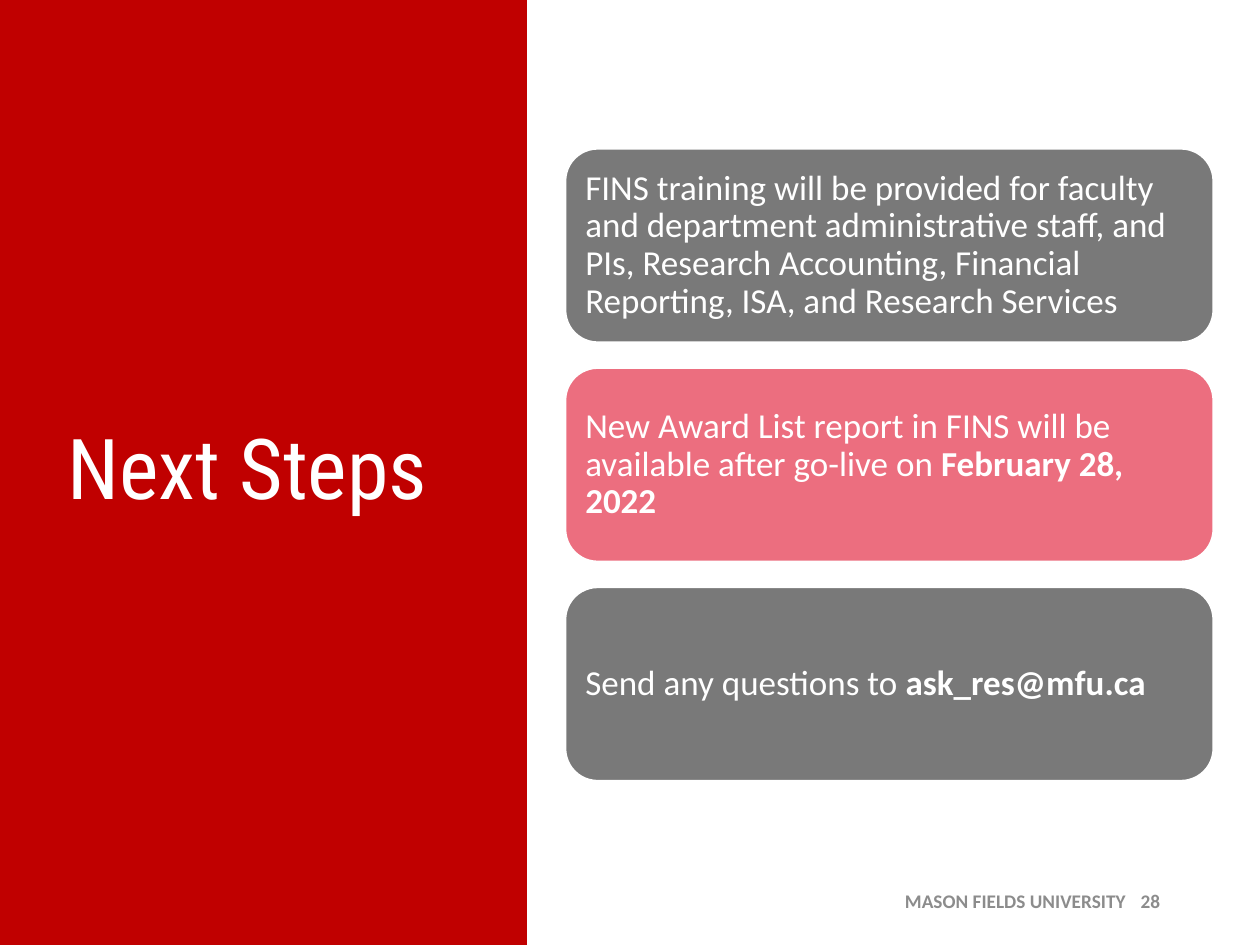
"""Build the "Next Steps" slide with a red title panel and three stacked cards."""
from dataclasses import dataclass
from typing import Any

import pptx
import pptx.dml.color
import pptx.enum.shapes
import pptx.enum.text
import pptx.util

Cm = pptx.util.Cm
Pt = pptx.util.Pt
ALIGN = pptx.enum.text.PP_ALIGN
MIDDLE = pptx.enum.text.MSO_ANCHOR.MIDDLE

RED, GREY, PINK = "C00000", "797979", "EC6E7F"
WHITE, FOOTER_GREY = "FFFFFF", "8C8C8C"
CARD_LEFT, CARD_TOP, CARD_WIDTH, CARD_HEIGHT = 11.4, 3.0, 13.06, 3.9
CARD_PITCH = 4.42


@dataclass(frozen=True)
class Card:
    fill: str
    text: str
    bold_text: str = ""


@dataclass(frozen=True)
class FooterPart:
    text: str
    left: float
    width: float


CARDS = (
    Card(GREY, "FINS training will be provided for faculty and department "
               "administrative staff, and PIs, Research Accounting, Financial "
               "Reporting, ISA, and Research Services"),
    Card(PINK, "New Award List report in FINS will be available after go-live on ",
         "February 28, 2022"),
    Card(GREY, "Send any questions to ", "ask_res@mfu.ca"),
)
FOOTER = (
    FooterPart("MASON FIELDS UNIVERSITY", 16.7, 6.0),
    FooterPart("28", 22.4, 0.99),
)


def apply_format(target: Any, values: dict[str, Any]) -> None:
    for name, value in values.items():
        setattr(target, name, value)


def set_color(color_format: Any, color: str) -> None:
    color_format.rgb = pptx.dml.color.RGBColor.from_string(color)


def set_fill(shape: Any, color: str) -> None:
    shape.fill.solid()
    set_color(shape.fill.fore_color, color)


def add_run(paragraph: Any, text: str, color: str, font: dict[str, Any]) -> None:
    run = paragraph.add_run()
    run.text = text
    apply_format(run.font, font)
    set_color(run.font.color, color)


def format_title(title: Any) -> None:
    apply_format(title, {"left": Cm(0), "top": Cm(0),
                         "width": Cm(10.62), "height": Cm(19.05)})
    set_fill(title, RED)
    apply_format(title.text_frame, {"vertical_anchor": MIDDLE, "word_wrap": True,
                                    "margin_left": Cm(1.36)})
    paragraph = title.text_frame.paragraphs[0]
    apply_format(paragraph, {"alignment": ALIGN.LEFT, "line_spacing": 0.9,
                             "space_before": Pt(0)})
    add_run(paragraph, "Next Steps", WHITE,
            {"name": "Roboto Condensed", "size": Pt(48)})


def add_card(slide: Any, card: Card, top: float) -> None:
    shape = slide.shapes.add_shape(
        pptx.enum.shapes.MSO_SHAPE.ROUNDED_RECTANGLE,
        Cm(CARD_LEFT), Cm(top), Cm(CARD_WIDTH), Cm(CARD_HEIGHT))
    shape.shadow.inherit = False
    set_fill(shape, card.fill)
    set_color(shape.line.color, WHITE)
    shape.line.width = Pt(1)
    margins = {f"margin_{side}": Cm(0.21)
               for side in ("left", "top", "right", "bottom")}
    apply_format(shape.text_frame,
                 {"word_wrap": True, "vertical_anchor": MIDDLE, **margins})
    paragraph = shape.text_frame.paragraphs[0]
    apply_format(paragraph, {"alignment": ALIGN.LEFT, "line_spacing": 0.9})
    for text, bold in ((card.text, False), (card.bold_text, True)):
        if text:
            add_run(paragraph, text, WHITE,
                    {"name": "Calibri", "size": Pt(20), "bold": bold})


def add_footer_part(slide: Any, part: FooterPart) -> None:
    box = slide.shapes.add_textbox(Cm(part.left), Cm(17.65), Cm(part.width), Cm(1.02))
    apply_format(box.text_frame, {"word_wrap": True, "vertical_anchor": MIDDLE,
                                  "margin_left": Cm(0), "margin_right": Cm(0)})
    paragraph = box.text_frame.paragraphs[0]
    paragraph.alignment = ALIGN.RIGHT
    add_run(paragraph, part.text, FOOTER_GREY,
            {"name": "Calibri", "size": Pt(11), "bold": True})


def main() -> None:
    presentation = pptx.Presentation()
    apply_format(presentation, {"slide_width": Cm(25.4), "slide_height": Cm(19.05)})
    slide = presentation.slides.add_slide(presentation.slide_layouts[5])
    format_title(slide.shapes.title)
    for part in FOOTER:
        add_footer_part(slide, part)
    for index, card in enumerate(CARDS):
        add_card(slide, card, CARD_TOP + index * CARD_PITCH)
    presentation.save("out.pptx")


if __name__ == "__main__":
    main()
